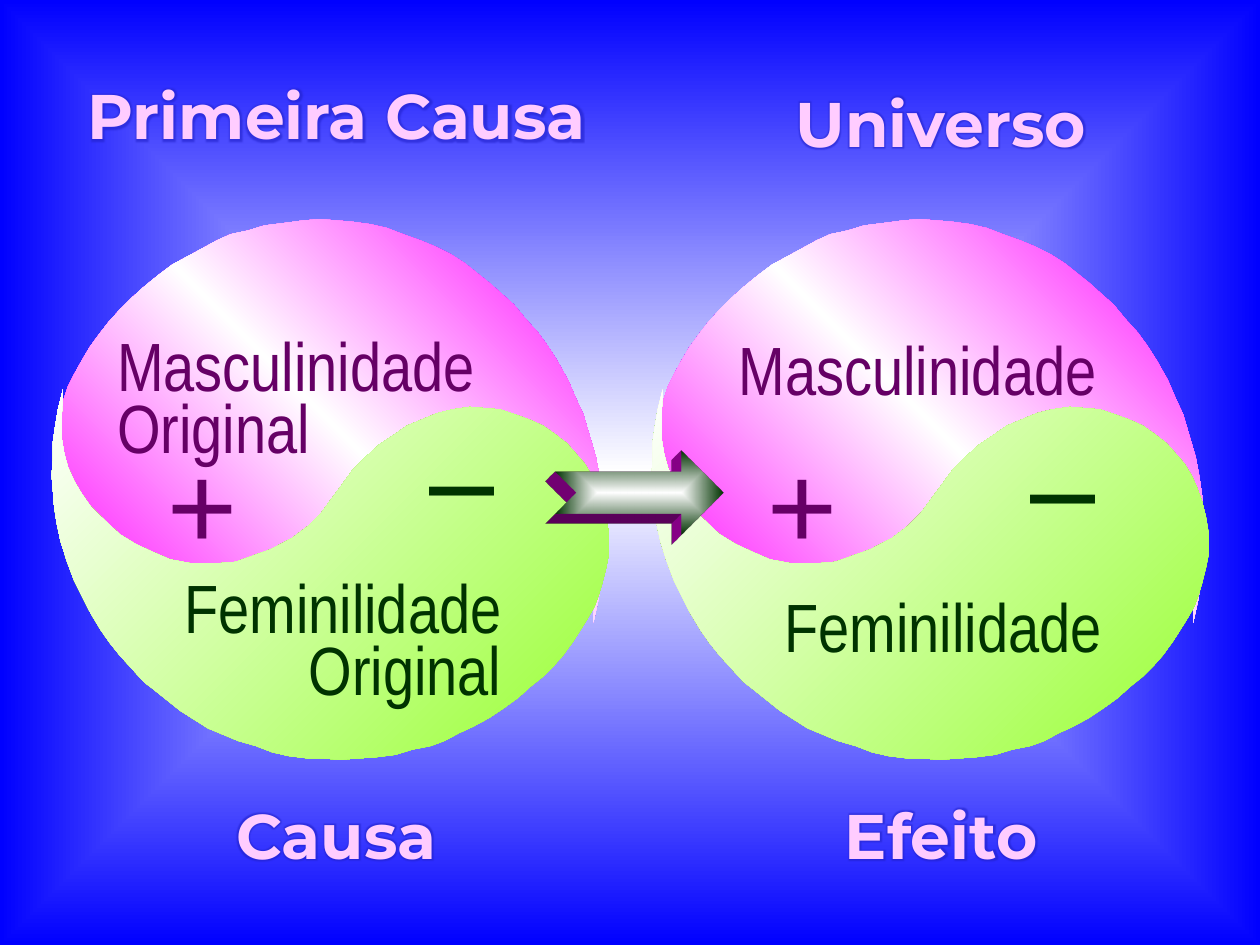
from lxml import etree
from pptx import Presentation
from pptx.dml.color import RGBColor
from pptx.enum.shapes import MSO_SHAPE
from pptx.enum.text import MSO_AUTO_SIZE, PP_ALIGN
from pptx.oxml import parse_xml
from pptx.oxml.ns import nsdecls, qn
from pptx.util import Cm, Pt

ARROW = MSO_SHAPE.NOTCHED_RIGHT_ARROW
GROW = MSO_AUTO_SIZE.SHAPE_TO_FIT_TEXT
LEFT, MID, RIGHT = PP_ALIGN.LEFT, PP_ALIGN.CENTER, PP_ALIGN.RIGHT

WHITE = RGBColor(0xFF, 0xFF, 0xFF)
BLUE = RGBColor(0x00, 0x00, 0xFF)
PINK = RGBColor(0xFF, 0x00, 0xFF)
LIME = RGBColor(0x99, 0xFF, 0x33)
PLUM = RGBColor(0x66, 0x00, 0x66)
DARK = RGBColor(0x00, 0x33, 0x00)
ROSE = RGBColor(0xFF, 0xCC, 0xFF)
LILAC = RGBColor(0xCC, 0x66, 0xFF)
EDGE = RGBColor(0x99, 0x00, 0x99)
NAVY = RGBColor(0x22, 0x22, 0xCC)

UNIT = Cm(0.0254)  # one step of the outline below
STEP = 476         # from the left symbol to the right one

# Outline of the upper half of the left symbol
HALF = [
    (234, 435), (244, 424), (252, 412), (269, 387), (280, 375), (291, 365),
    (308, 356), (322, 350), (336, 345), (349, 344), (361, 344), (372, 344),
    (387, 347), (401, 353), (414, 360), (427, 369), (441, 383), (450, 393),
    (457, 404), (463, 414), (467, 426), (470, 438), (472, 451), (472, 459),
    (472, 469), (471, 494), (475, 476), (477, 463), (479, 448), (479, 433),
    (480, 420), (479, 407), (478, 393), (476, 379), (473, 363), (468, 346),
    (463, 329), (457, 316), (451, 302), (442, 286), (435, 275), (427, 264),
    (417, 253), (408, 242), (399, 234), (389, 225), (379, 217), (369, 209),
    (358, 202), (346, 196), (334, 191), (320, 186), (307, 181), (294, 178),
    (279, 176), (267, 175), (254, 174), (241, 175), (226, 177), (210, 179),
    (197, 183), (183, 186), (172, 191), (161, 197), (150, 203), (137, 210),
    (125, 219), (114, 228), (104, 237), (95, 246), (86, 256), (79, 265),
    (71, 276), (64, 288), (59, 297), (54, 307), (51, 316), (48, 326),
    (45, 339), (43, 350), (43, 361), (43, 371), (45, 384), (48, 397),
    (52, 409), (56, 419), (62, 430), (69, 438), (76, 447), (85, 455),
    (95, 462), (105, 468), (116, 472), (128, 476), (140, 477), (152, 478),
    (166, 476), (178, 473), (190, 468), (201, 462), (211, 455), (223, 446),
]
# The lower half is the upper one turned round and slightly flattened
LOWER = [(526.6 - 1.011 * x, 763.6 - 0.921 * y) for x, y in HALF]


def blend(fill, host, colors, angle=None, path=None):
    """Give host a gradient of evenly spaced colors, linear or from the centre."""
    fill.solid()
    last = len(colors) - 1
    stops = "".join(
        f'<a:gs pos="{100000 * i // last}"><a:srgbClr val="{c}"/></a:gs>'
        for i, c in enumerate(colors))
    if path:
        way = (f'<a:path path="{path}"><a:fillToRect l="50000" t="50000" '
               'r="50000" b="50000"/></a:path>')
    else:
        way = f'<a:lin ang="{angle * 60000}" scaled="0"/>'
    grad = parse_xml(f'<a:gradFill {nsdecls("a")} rotWithShape="1">'
                     f'<a:gsLst>{stops}</a:gsLst>{way}</a:gradFill>')
    host.replace(host.find(qn("a:solidFill")), grad)


def add_half(slide, points, shift, colors, angle):
    first, *rest = [(x + shift, y) for x, y in points]
    pen = slide.shapes.build_freeform(*first, scale=UNIT)
    pen.add_line_segments(rest, close=True)
    half = pen.convert_to_shape()
    half.shadow.inherit = False
    half.line.fill.background()
    blend(half.fill, half._element.spPr, colors, angle)


def add_text(slide, text, box, font, size, align=LEFT, bold=False, space=None):
    """Add a text box and return it with its runs."""
    shape = slide.shapes.add_textbox(*(Cm(n) for n in box))
    frame = shape.text_frame
    frame.word_wrap = False
    frame.text = text
    runs = []
    for para in frame.paragraphs:
        para.alignment = align
        para.line_spacing = space
        for run in para.runs:
            run.font.name, run.font.size, run.font.bold = font, Pt(size), bold
            runs.append(run)
    return shape, runs


def add_title(slide, text, box):
    _, runs = add_text(slide, text, box, "Montserrat", 36, MID, True)
    for run in runs:
        props = run.font._element
        blend(run.font.fill, props, [ROSE, LILAC], 0)
        props.insert(0, parse_xml(
            f'<a:ln {nsdecls("a")} w="28575"><a:solidFill>'
            f'<a:srgbClr val="{DARK}"/></a:solidFill></a:ln>'))
        props.find(qn("a:gradFill")).addnext(parse_xml(
            f'<a:effectLst {nsdecls("a")}><a:glow rad="50800">'
            f'<a:srgbClr val="{NAVY}"><a:alpha val="60000"/></a:srgbClr>'
            '</a:glow></a:effectLst>'))


def add_label(slide, text, box, color, align=LEFT):
    shape, runs = add_text(slide, text, box, "Arial Narrow", 39, align, space=0.75)
    finish(shape, runs, color)


def add_sign(slide, text, left, top, width, color):
    shape, runs = add_text(slide, text, (left, top, width, 3.3),
                           "Times New Roman", 72, bold=True)
    finish(shape, runs, color)


def finish(shape, runs, color):
    shape.text_frame.auto_size = GROW
    for run in runs:
        run.font.color.rgb = color


def add_arrow(slide):
    """Add the arrow with its depth toward the lower left."""
    arrow = slide.shapes.add_shape(ARROW, Cm(11.2), Cm(9.09), Cm(3.38), Cm(1.7))
    arrow.shadow.inherit = False
    arrow.line.fill.background()
    props = arrow._element.spPr
    blend(arrow.fill, props, [WHITE, DARK], path="rect")
    scene = etree.SubElement(props, qn("a:scene3d"))
    etree.SubElement(scene, qn("a:camera"), prst="legacyObliqueBottomLeft")
    etree.SubElement(scene, qn("a:lightRig"), rig="legacyFlat3", dir="t")
    solid = etree.SubElement(props, qn("a:sp3d"), extrusionH="201600",
                             prstMaterial="legacyMatte")
    tint = etree.SubElement(solid, qn("a:extrusionClr"))
    etree.SubElement(tint, qn("a:srgbClr"), val=str(EDGE))


def main():
    deck = Presentation()
    deck.slide_width, deck.slide_height = Cm(25.4), Cm(19.05)
    slide = deck.slides.add_slide(deck.slide_layouts[6])
    back = slide.background.fill
    back.solid()
    blend(back, slide._element.find(".//" + qn("p:bgPr")), [WHITE, BLUE],
          path="shape")

    for shift in (0, STEP):
        add_half(slide, HALF, shift, [PINK, WHITE, PINK], 315)
        add_half(slide, LOWER, shift, [LIME, WHITE], 225)

    add_label(slide, "Feminilidade\nOriginal", (2.16, 11.66, 8.2, 2.74), DARK, RIGHT)
    add_label(slide, "Masculinidade\nOriginal", (2.11, 6.78, 8.92, 2.74), PLUM)
    add_label(slide, "Feminilidade", (15.04, 12.04, 7.95, 1.5), DARK, MID)
    add_label(slide, "Masculinidade", (13.94, 6.86, 9.12, 1.52), PLUM, MID)

    for left in (3.1, 15.21):
        add_sign(slide, "+", left, 8.46, 1.96, PLUM)
    for left, top in ((8.43, 6.98), (20.55, 7.14)):
        add_sign(slide, "_", left, top, 1.78, DARK)

    add_title(slide, "Primeira Causa", (1.07, 1.42, 11.43, 2.01))
    add_title(slide, "Universo", (14.88, 1.57, 8.18, 1.8))
    add_title(slide, "Causa", (2.69, 15.93, 8.18, 1.8))
    add_title(slide, "Efeito", (14.88, 15.93, 8.18, 1.8))
    add_arrow(slide)
    deck.save("out.pptx")


if __name__ == "__main__":
    main()
